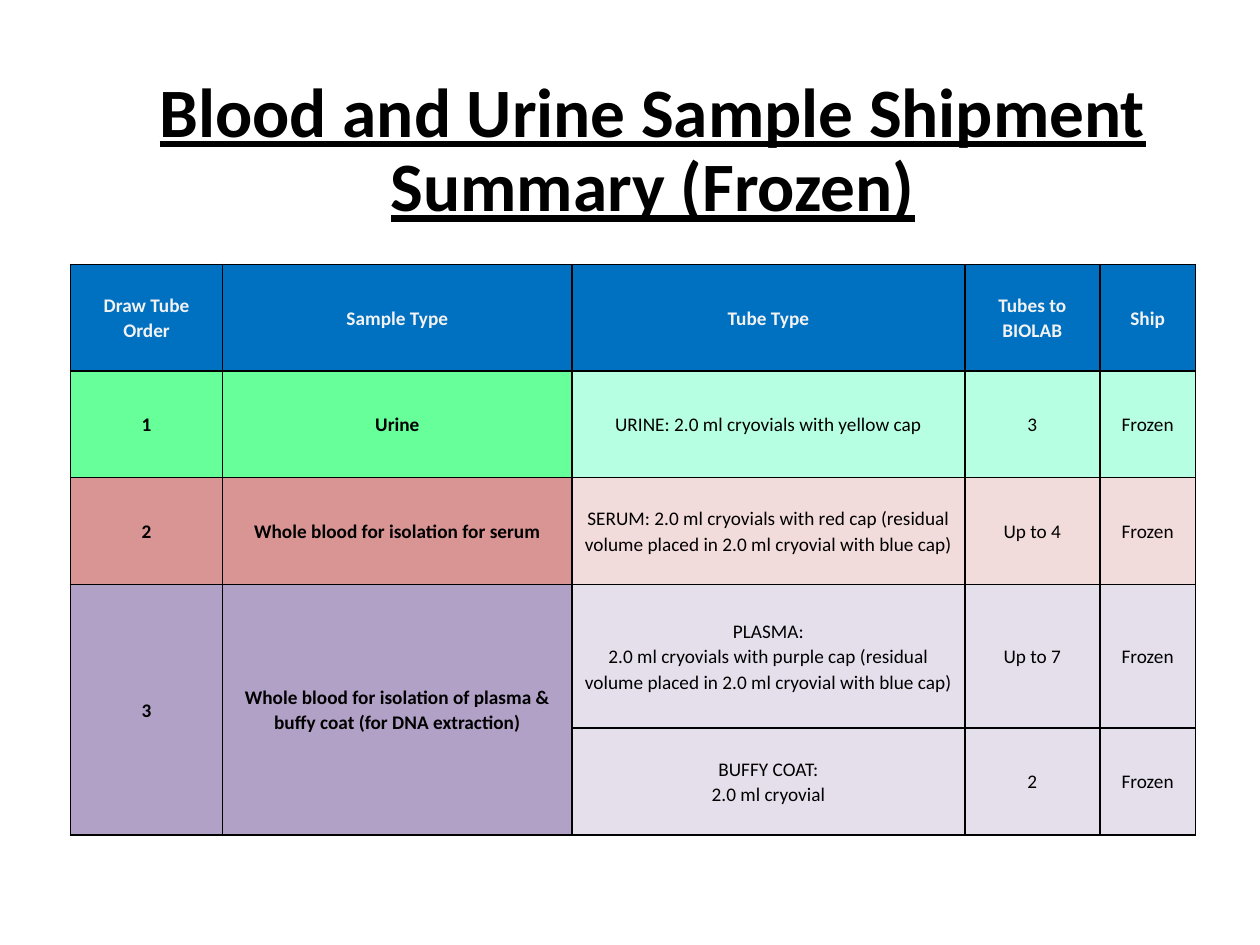
"""Build the frozen blood and urine sample shipment summary slide."""
from dataclasses import dataclass

from lxml import etree
from pptx import Presentation
from pptx.dml.color import RGBColor
from pptx.enum.text import MSO_ANCHOR, PP_ALIGN
from pptx.oxml.ns import qn
from pptx.util import Cm, Pt

MIDDLE, BOTTOM = MSO_ANCHOR.MIDDLE, MSO_ANCHOR.BOTTOM
CENTER = PP_ALIGN.CENTER


@dataclass(frozen=True)
class Theme:
    font: str = "Calibri"
    title: float = 39.6
    body: float = 11
    ink: str = "000000"
    light: str = "F2F2F2"
    line: float = 1


@dataclass(frozen=True)
class Row:
    texts: tuple[str, ...]
    dark: str
    pale: str
    high: float = 2.15
    ink: str = "000000"
    head: bool = False


THEME = Theme()
COLS = (3.07, 7.04, 7.92, 2.72, 1.93)
LEADS = 2
INSETS = {"margin_left": Cm(0.18), "margin_right": Cm(0.18),
          "margin_top": 0, "margin_bottom": 0, "vertical_anchor": MIDDLE}
FROZEN = "Frozen"
ROWS = (
    Row(("Draw Tube Order", "Sample Type", "Tube Type", "Tubes to BIOLAB", "Ship"),
        "0070C0", "0070C0", ink=THEME.light, head=True),
    Row(("1", "Urine", "URINE: 2.0 ml cryovials with yellow cap", "3", FROZEN),
        "66FF99", "B7FFE2"),
    Row(("2", "Whole blood for isolation for serum",
         "SERUM: 2.0 ml cryovials with red cap (residual volume placed in "
         "2.0 ml cryovial with blue cap)", "Up to 4", FROZEN),
        "D99594", "F2DBDB"),
    Row(("3", "Whole blood for isolation of plasma & buffy coat (for DNA extraction)",
         "PLASMA:\n2.0 ml cryovials with purple cap (residual volume placed in "
         "2.0 ml cryovial with blue cap)", "Up to 7", FROZEN),
        "B2A1C7", "E5DFEC", high=2.9),
    Row(("", "", "BUFFY COAT:\n2.0 ml cryovial", "2", FROZEN),
        "B2A1C7", "E5DFEC"),
)


def apply(item, values: dict) -> None:
    """Set each attribute named in values."""
    for name, value in values.items():
        setattr(item, name, value)


def write(frame, text: str, space: float, ink: str, **look) -> None:
    """Fill a text frame with centred paragraphs."""
    frame.text = text
    for para in frame.paragraphs:
        apply(para, {"alignment": CENTER, "line_spacing": space})
        for run in para.runs:
            apply(run.font, {"name": THEME.font, **look})
            run.font.color.rgb = RGBColor.from_string(ink)


def edge(cell) -> None:
    """Draw a solid line on all four sides of a cell."""
    props = cell._tc.get_or_add_tcPr()
    for side in ("a:lnL", "a:lnR", "a:lnT", "a:lnB"):
        line = etree.SubElement(props, qn(side), w=str(Pt(THEME.line)))
        fill = etree.SubElement(line, qn("a:solidFill"))
        etree.SubElement(fill, qn("a:srgbClr"), val=THEME.ink)


def draw_cell(cell, row: Row, col: int) -> None:
    """Style one cell and write its text."""
    lead = col < LEADS
    edge(cell)
    apply(cell, INSETS)
    cell.fill.solid()
    cell.fill.fore_color.rgb = RGBColor.from_string(row.dark if lead else row.pale)
    if row.texts[col]:
        write(cell.text_frame, row.texts[col], 1.07, row.ink,
              size=Pt(THEME.body), bold=lead or row.head)


def draw_title(slide) -> None:
    """Add the underlined title."""
    frame = slide.shapes.add_textbox(Cm(2.21), Cm(2.87), Cm(21.9), Cm(1.83)).text_frame
    apply(frame, {"word_wrap": True, "vertical_anchor": BOTTOM})
    write(frame, "Blood and Urine Sample Shipment Summary (Frozen)", 0.9, THEME.ink,
          size=Pt(THEME.title), bold=True, underline=True)


def draw_table(slide) -> None:
    """Add the shipment table."""
    wide, high = sum(COLS), sum(row.high for row in ROWS)
    table = slide.shapes.add_table(len(ROWS), len(COLS), Cm(1.42), Cm(5.33),
                                   Cm(wide), Cm(high)).table
    for col, size in zip(table.columns, COLS):
        col.width = Cm(size)
    for r, row in enumerate(ROWS):
        table.rows[r].height = Cm(row.high)
        for c in range(len(COLS)):
            draw_cell(table.cell(r, c), row, c)
    last = len(ROWS) - 1
    for c in range(LEADS):
        table.cell(last - 1, c).merge(table.cell(last, c))


def main() -> None:
    """Create and save the slide."""
    deck = Presentation()
    apply(deck, {"slide_width": Cm(25.4), "slide_height": Cm(19.05)})
    slide = deck.slides.add_slide(deck.slide_layouts[6])
    draw_title(slide)
    draw_table(slide)
    deck.save("out.pptx")


if __name__ == "__main__":
    main()
